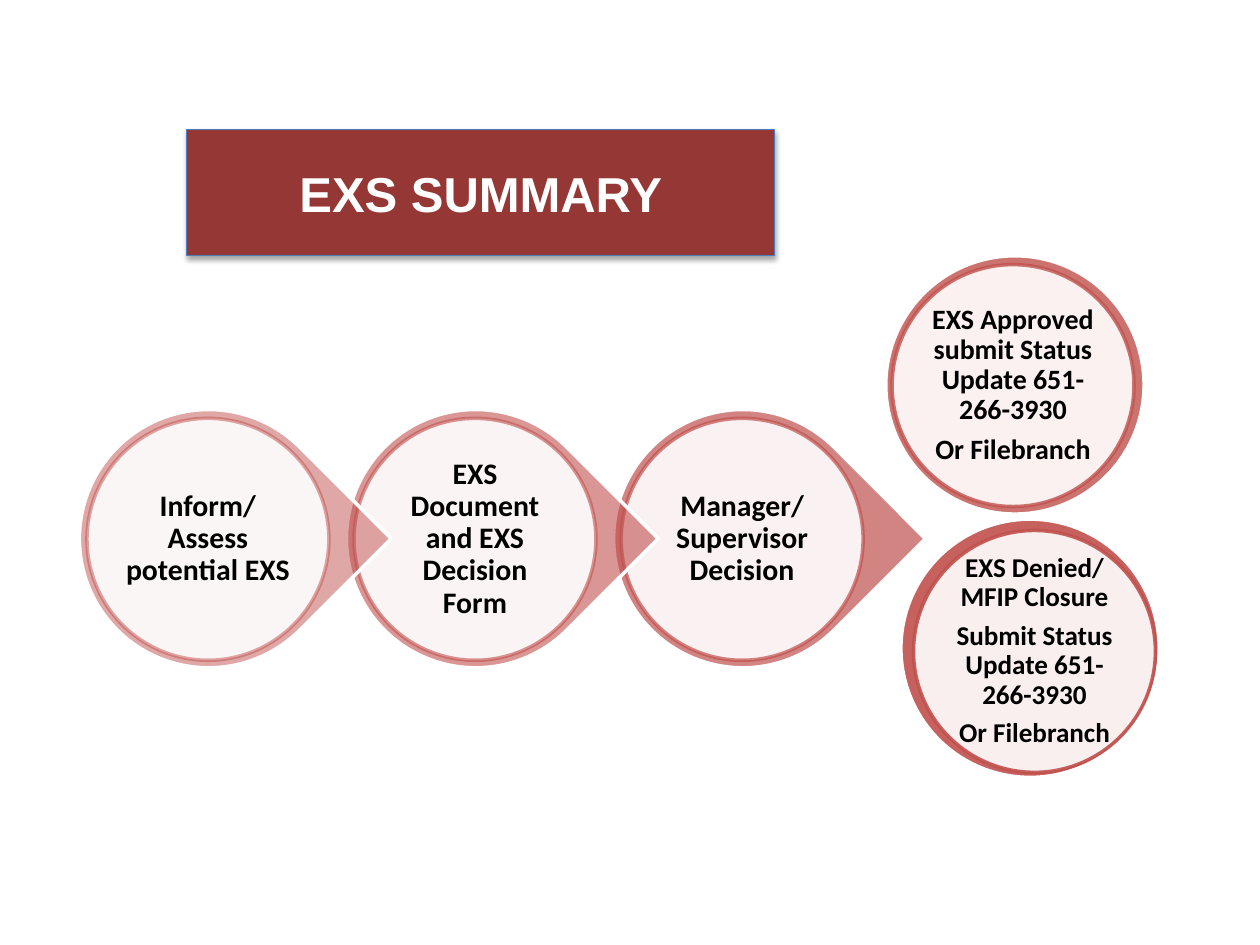
import pptx
import pptx.dml.color
import pptx.enum.shapes
import pptx.enum.text
import pptx.oxml
import pptx.oxml.ns
import pptx.util

Inches, Pt = pptx.util.Inches, pptx.util.Pt
SHAPES = pptx.enum.shapes.MSO_SHAPE
CENTER = pptx.enum.text.PP_ALIGN.CENTER
MIDDLE = pptx.enum.text.MSO_ANCHOR.MIDDLE

TITLE = "EXS SUMMARY"
STEPS = [
    "Inform/ Assess potential EXS",
    "EXS Document and EXS Decision Form",
    "Manager/ Supervisor Decision",
]
OUTCOMES = [
    dict(left=7.03, top=2.03, inset=(0.05, 0.07), opacity=80, size=16, lines=[
        "EXS Approved submit Status Update 651-266-3930", "Or Filebranch"]),
    dict(left=7.15, top=4.12, inset=(0.1, 0.09), opacity=90, size=15.5, lines=[
        "EXS Denied/ MFIP Closure", "Submit Status Update 651-266-3930",
        "Or Filebranch"]),
]
RED, DARK_RED, BLUE, WHITE, BLACK = "C0504D", "953735", "4B7EBC", "FFFFFF", "000000"
OUTER, INNER, LABEL = 2.05, 1.92, 1.37
STEP_LEFT, STEP_TOP, STEP_PITCH = 0.63, 3.25, 2.12
NAMESPACE = pptx.oxml.ns.nsdecls("a")


def paint(target, color, opacity=100):
    target.solid()
    target.fore_color.rgb = pptx.dml.color.RGBColor.from_string(color)
    if opacity < 100:
        rgb = target._xPr.find(".//" + pptx.oxml.ns.qn("a:srgbClr"))
        rgb.append(pptx.oxml.parse_xml(f'<a:alpha {NAMESPACE} val="{opacity * 1000}"/>'))


def write(para, text, font, size, color):
    para.text = text
    para.alignment = CENTER
    para.font.name, para.font.size, para.font.bold = font, Pt(size), True
    para.font.color.rgb = pptx.dml.color.RGBColor.from_string(color)


def add_title(page):
    title = page.shapes.title
    title.left, title.top = Inches(1.48), Inches(1.03)
    title.width, title.height = Inches(4.67), Inches(1)
    properties = title._element.spPr
    properties.append(pptx.oxml.parse_xml(
        f'<a:prstGeom {NAMESPACE} prst="roundRect"><a:avLst/></a:prstGeom>'))
    paint(title.fill, DARK_RED)
    paint(title.line.fill, BLUE)
    title.line.width = Pt(0.75)
    properties.append(pptx.oxml.parse_xml(
        f'<a:effectLst {NAMESPACE}><a:outerShdw blurRad="{Pt(3.1)}" dist="{Pt(1.8)}" '
        f'dir="5400000" rotWithShape="0"><a:srgbClr val="{BLACK}">'
        f'<a:alpha val="35000"/></a:srgbClr></a:outerShdw></a:effectLst>'))
    title.text_frame.vertical_anchor = MIDDLE
    write(title.text_frame.paragraphs[0], TITLE, "Arial", 28, WHITE)


def add_disc(page, kind, left, top, size, fill, fill_opacity, line, line_opacity=100):
    disc = page.shapes.add_shape(kind, *map(Inches, (left, top, size, size)))
    disc.shadow.inherit = False
    paint(disc.fill, fill, fill_opacity)
    paint(disc.line.fill, line, line_opacity)
    disc.line.width = Pt(2)
    return disc


def add_node(page, left, top, lines, opacity, size, inset=(0.06, 0.07), pointed=False):
    kind = SHAPES.TEAR if pointed else SHAPES.OVAL
    outer = add_disc(page, kind, left, top, OUTER, RED, opacity, WHITE)
    if pointed:
        outer.rotation = 45
    left, top = left + inset[0], top + inset[1]
    add_disc(page, SHAPES.OVAL, left, top, INNER, WHITE, 90, RED, opacity)
    margin = (INNER - LABEL) / 2
    box = page.shapes.add_textbox(
        *map(Inches, (left + margin, top + margin, LABEL, LABEL)))
    frame = box.text_frame
    frame.word_wrap = True
    frame.vertical_anchor = MIDDLE
    frame.margin_left = frame.margin_right = Inches(0.02)
    frame.margin_top = frame.margin_bottom = Inches(0.02)
    for index, line in enumerate(lines):
        para = frame.add_paragraph() if index else frame.paragraphs[0]
        para.line_spacing = 0.9
        para.space_after = Pt(size * 0.35)
        write(para, line, "Calibri", size, BLACK)


def main():
    deck = pptx.Presentation()
    deck.slide_width, deck.slide_height = Inches(10), Inches(7.5)
    page = deck.slides.add_slide(deck.slide_layouts[5])
    add_title(page)
    for outcome in reversed(OUTCOMES):
        add_node(page, **outcome)
    for index, text in reversed(list(enumerate(STEPS))):
        add_node(page, STEP_LEFT + index * STEP_PITCH, STEP_TOP, [text],
                 50 + 10 * index, 17, pointed=True)
    deck.save("out.pptx")


if __name__ == "__main__":
    main()
